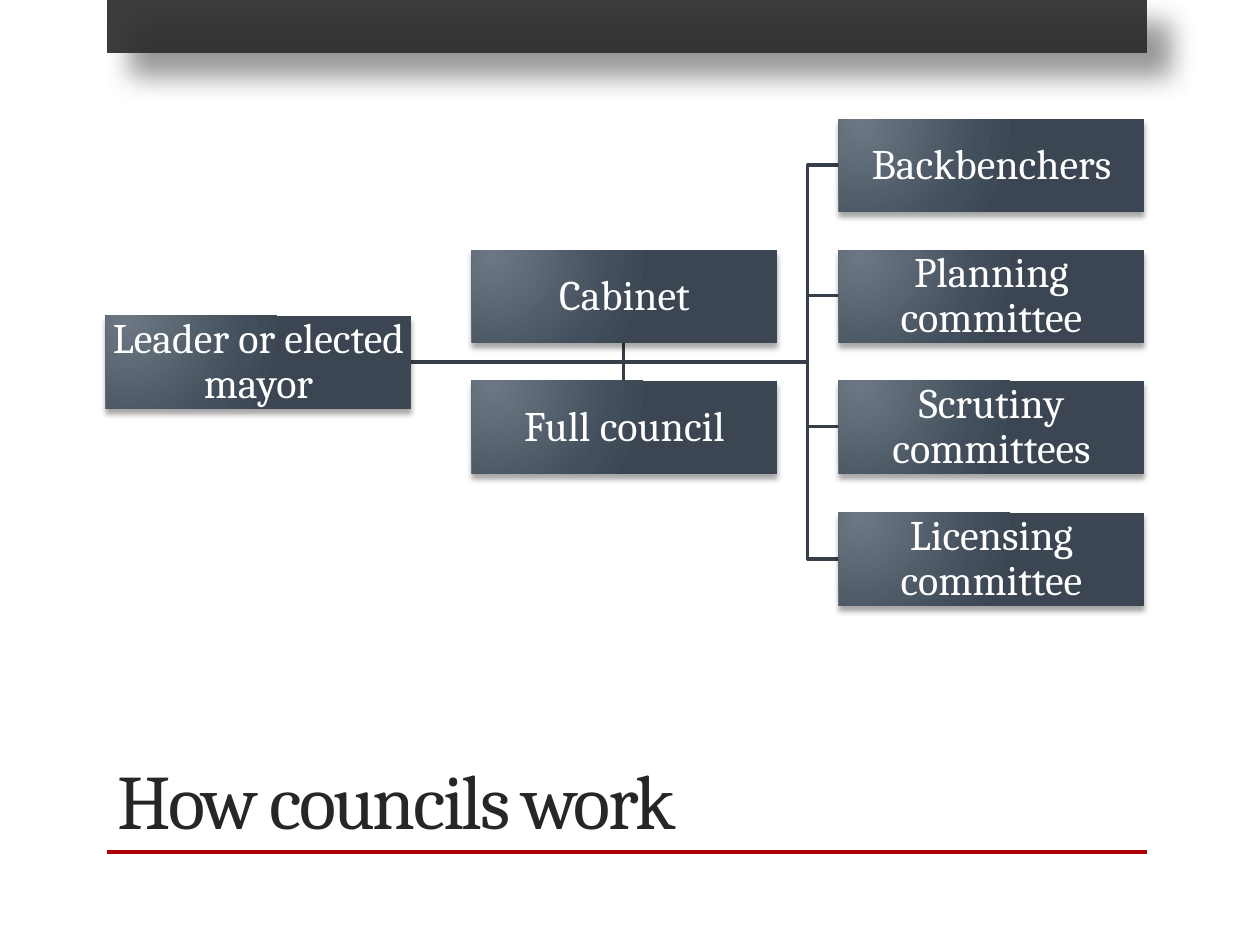
from pptx import Presentation
from pptx import util as u
from pptx.dml.color import RGBColor
from pptx.enum import shapes, text
from pptx.oxml import parse_xml
from pptx.oxml.ns import qn

PX = u.Inches(1) / 126
NS = 'xmlns:a="http://schemas.openxmlformats.org/drawingml/2006/main"'
FONT = "Cambria"
BAR = RGBColor(0x30, 0x30, 0x30)
RED = RGBColor(0xAD, 0x01, 0x01)
INK = RGBColor(0x26, 0x26, 0x26)
WIRE = RGBColor(0x35, 0x3E, 0x49)
WHITE = RGBColor(0xFF, 0xFF, 0xFF)
STOPS = (
    (0, RGBColor(0x6D, 0x77, 0x84)),
    (76, RGBColor(0x42, 0x4E, 0x5B)),
    (100, RGBColor(0x3B, 0x46, 0x52)),
)

BOX_W, BOX_H = 305, 93
COLS = (106, 472, 839)
ROWS = [119 + 394 * i // 3 for i in range(4)]
LEAD_Y = 316
TRUNK = 808
TEAMS = (
    "Backbenchers",
    "Planning committee",
    "Scrutiny committees",
    "Licensing committee",
)
BODIES = (("Cabinet", ROWS[1], BOX_H), ("Full council", ROWS[2], 0))


def px(*vals):
    return [round(v * PX) for v in vals]


def apply(item, vals):
    for key, val in vals.items():
        setattr(item, key, val)


def rect(slide, area, color):
    shape = slide.shapes.add_shape(shapes.MSO_SHAPE.RECTANGLE, *px(*area))
    shape.shadow.inherit = False
    shape.line.fill.background()
    shape.fill.solid()
    shape.fill.fore_color.rgb = color
    return shape


def shade(shape, alpha, blur, dist, angle):
    effects = shape._element.spPr.find(qn("a:effectLst"))
    effects.append(parse_xml(
        f'<a:outerShdw {NS} blurRad="{u.Pt(blur)}" dist="{u.Pt(dist)}" '
        f'dir="{angle * 60000}" algn="tl" rotWithShape="0">'
        f'<a:srgbClr val="000000"><a:alpha val="{alpha * 1000}"/></a:srgbClr>'
        '</a:outerShdw>'))


def glow(shape):
    stops = "".join(
        f'<a:gs pos="{pos * 1000}"><a:srgbClr val="{color}"/></a:gs>'
        for pos, color in STOPS)
    props = shape._element.spPr
    props.replace(props.find(qn("a:solidFill")), parse_xml(
        f'<a:gradFill {NS} rotWithShape="1"><a:gsLst>{stops}</a:gsLst>'
        '<a:path path="circle"><a:fillToRect l="15000" t="15000" '
        'r="100000" b="100000"/></a:path></a:gradFill>'))


def write(shape, words, size, color, frame, para):
    body = shape.text_frame
    apply(body, {"word_wrap": True, **frame})
    line = body.paragraphs[0]
    apply(line, para)
    run = line.add_run()
    run.text = words
    apply(run.font, {"name": FONT, "size": u.Pt(size)})
    run.font.color.rgb = color
    return run


def banner(slide):
    shape = rect(slide, (107, 0, 1040, 53), BAR)
    color = shape._element.spPr.find(qn("a:solidFill"))[0]
    color.append(parse_xml(f'<a:alpha {NS} val="75000"/>'))
    shade(shape, 30, 15, 18, 45)


def title(slide, words):
    shape = slide.shapes.add_textbox(*px(105, 731, 935, 120))
    run = write(shape, words, 44, INK,
                {"vertical_anchor": text.MSO_ANCHOR.BOTTOM}, {})
    run.font._element.set("spc", "-150")


def box(slide, words, x, y):
    shape = rect(slide, (x, y, BOX_W, BOX_H), STOPS[-1][1])
    glow(shape)
    shade(shape, 35, 3, 3, 90)
    sides = ("left", "top", "right", "bottom")
    frame = {f"margin_{side}": u.Inches(0.02) for side in sides}
    frame["vertical_anchor"] = text.MSO_ANCHOR.MIDDLE
    write(shape, words, 24, WHITE, frame,
          {"alignment": text.PP_ALIGN.CENTER, "line_spacing": 0.9})


def wire(slide, start, *points):
    path = slide.shapes.build_freeform(*start, scale=PX)
    path.add_line_segments(points, close=False)
    shape = path.convert_to_shape()
    shape.shadow.inherit = False
    shape.fill.background()
    shape.line.color.rgb = WIRE
    shape.line.width = u.Pt(1.75)


def chart(slide):
    mid = LEAD_Y + BOX_H // 2
    start = (COLS[0] + BOX_W, mid)
    stem = COLS[1] + BOX_W // 2
    for _, y, edge in BODIES:
        wire(slide, start, (stem, mid), (stem, y + edge))
    for y in ROWS:
        end = y + BOX_H // 2
        wire(slide, start, (TRUNK, mid), (TRUNK, end), (COLS[2], end))
    box(slide, "Leader or elected mayor", COLS[0], LEAD_Y)
    for words, y in zip(TEAMS, ROWS):
        box(slide, words, COLS[2], y)
    for words, y, _ in BODIES:
        box(slide, words, COLS[1], y)


def main():
    deck = Presentation()
    apply(deck, {"slide_width": u.Inches(10), "slide_height": u.Inches(7.5)})
    slide = deck.slides.add_slide(deck.slide_layouts[6])
    for _ in range(2):
        banner(slide)
    rect(slide, (107, 850, 1040, 4), RED)
    title(slide, "How councils work")
    chart(slide)
    deck.save("out.pptx")


if __name__ == "__main__":
    main()
